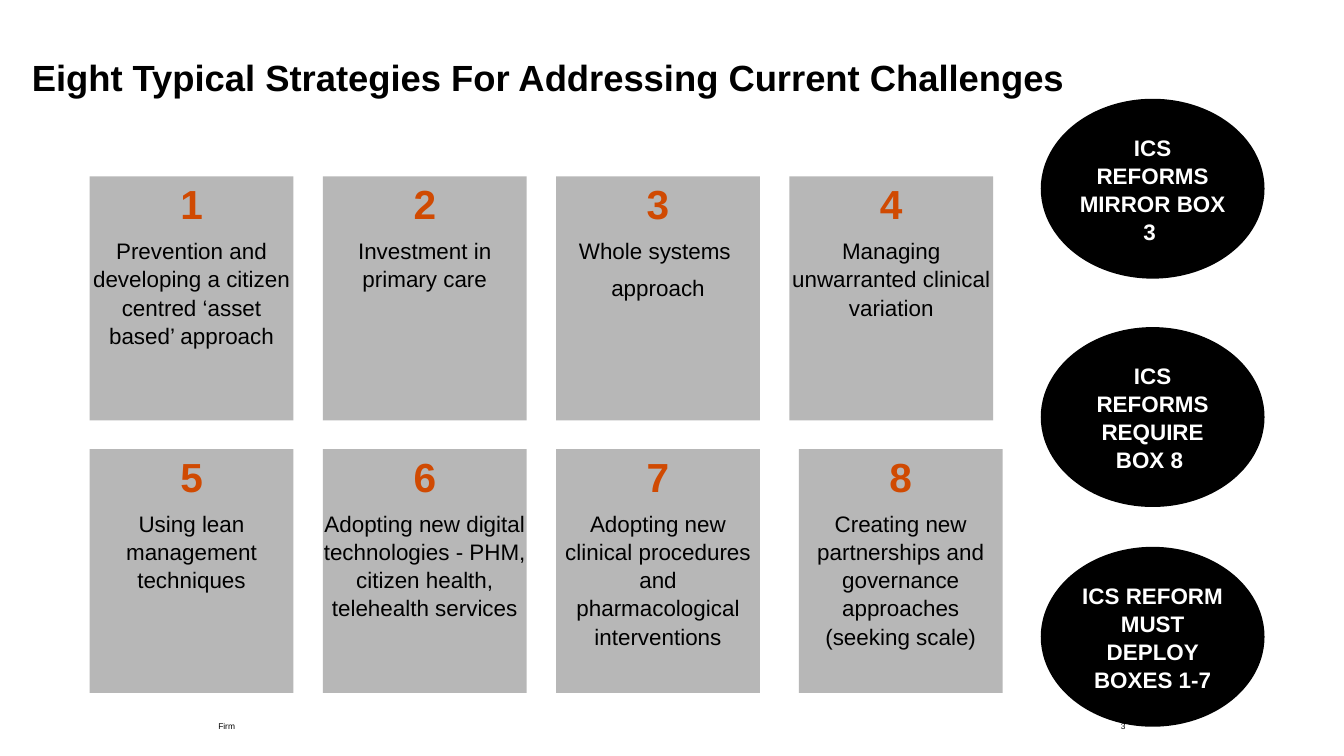
"""Build the slide of eight strategy boxes with three reform callouts."""
import pptx
import pptx.dml.color
import pptx.enum.shapes
import pptx.enum.text
import pptx.oxml
import pptx.util

Pt = pptx.util.Pt
RGBColor = pptx.dml.color.RGBColor
ALIGN = pptx.enum.text.PP_ALIGN
ANCHOR = pptx.enum.text.MSO_ANCHOR
SHAPE = pptx.enum.shapes.MSO_SHAPE

BLACK = RGBColor(0x00, 0x00, 0x00)
WHITE = RGBColor(0xFF, 0xFF, 0xFF)
GREY = RGBColor(0xB7, 0xB7, 0xB7)
ORANGE = RGBColor(0xD0, 0x4A, 0x02)

TITLE = "Eight Typical Strategies For Addressing Current Challenges"
STRATEGIES = [
    ["Prevention and developing a citizen centred ‘asset based’ approach"],
    ["Investment in primary care"],
    ["Whole systems ", "approach"],
    ["Managing unwarranted clinical variation"],
    ["Using lean management techniques"],
    ["Adopting new digital technologies - PHM, citizen health, telehealth services"],
    ["Adopting new clinical procedures and pharmacological interventions"],
    ["Creating new partnerships and governance approaches (seeking scale)"],
]
CALLOUTS = [
    ("ICS REFORMS MIRROR BOX 3 ", 141.1),
    ("ICS REFORMS REQUIRE BOX 8 ", 467.3),
    ("ICS REFORM MUST DEPLOY BOXES 1-7", 781.2),
]
FOOTERS = [
    ("Firm", (311.8, 1030.3, 627.1, 13.7), ALIGN.LEFT, True),
    ("3", (1597.7, 1030.3, 10.1, 13.7), ALIGN.RIGHT, False),
]
PLACEHOLDER_OF_BOX = {1: 1, 6: 2, 7: 3, 8: 4}

COLUMNS = 4
BOX_WIDTH, BOX_HEIGHT = 290.9, 348.5
GRID_LEFT, GRID_TOP = 128.2, 252
COLUMN_PITCH, ROW_PITCH = 333.2, 389.5
BOX_SHIFT = {8: 13.5}
CALLOUT_LEFT, CALLOUT_WIDTH, CALLOUT_HEIGHT = 1486.8, 319.7, 257

NUMBER_FONT = {"name": "Arial", "size": Pt(58), "bold": True}
STRATEGY_FONT = {"name": "Arial", "size": Pt(32), "bold": False}
CALLOUT_FONT = {"name": "Arial", "size": Pt(32), "bold": True}
TITLE_FONT = {"name": "Arial", "size": Pt(52), "bold": True}
FOOTER_FONT = {"name": "Arial", "size": Pt(12), "bold": False}
BOX_LINES = {"alignment": ALIGN.CENTER, "line_spacing": 1.05, "space_after": Pt(0)}


def apply(target, values):
    for name, value in values.items():
        setattr(target, name, value)


def place(shape, left, top, width, height):
    apply(shape, {"left": Pt(left), "top": Pt(top),
                  "width": Pt(width), "height": Pt(height)})


def set_frame(shape, anchor, margin=0, wrap=True):
    margins = {f"margin_{side}": Pt(margin) for side in ("left", "top", "right", "bottom")}
    apply(shape.text_frame, {**margins, "word_wrap": wrap, "vertical_anchor": anchor,
                             "auto_size": pptx.enum.text.MSO_AUTO_SIZE.NONE})


def set_paragraph(paragraph, text, font, color, lines, before=0):
    properties = paragraph._p.get_or_add_pPr()
    properties.set("marL", "0")
    properties.set("indent", "0")
    apply(paragraph, {**lines, "space_before": Pt(before)})
    properties.append(pptx.oxml.parse_xml(
        '<a:buNone xmlns:a="http://schemas.openxmlformats.org/drawingml/2006/main"/>'))
    run = paragraph.add_run()
    run.text = text
    apply(run.font, font)
    run.font.color.rgb = color


def paint(shape, color):
    shape.fill.solid()
    shape.fill.fore_color.rgb = color
    shape.line.fill.background()


def add_shape(slide, kind):
    shape = slide.shapes.add_shape(kind, 0, 0, 0, 0)
    shape.shadow.inherit = False
    return shape


def add_strategy(slide, number, lines):
    row, column = divmod(number - 1, COLUMNS)
    if number in PLACEHOLDER_OF_BOX:
        box = slide.placeholders[PLACEHOLDER_OF_BOX[number]]
    else:
        box = add_shape(slide, SHAPE.RECTANGLE)
    place(box, GRID_LEFT + column * COLUMN_PITCH + BOX_SHIFT.get(number, 0),
          GRID_TOP + row * ROW_PITCH, BOX_WIDTH, BOX_HEIGHT)
    paint(box, GREY)
    set_frame(box, ANCHOR.TOP)
    frame = box.text_frame
    set_paragraph(frame.paragraphs[0], str(number), NUMBER_FONT, ORANGE, BOX_LINES)
    for line in lines:
        set_paragraph(frame.add_paragraph(), line, STRATEGY_FONT, BLACK, BOX_LINES, 12)


def add_callout(slide, text, top):
    ellipse = add_shape(slide, SHAPE.OVAL)
    place(ellipse, CALLOUT_LEFT, top, CALLOUT_WIDTH, CALLOUT_HEIGHT)
    paint(ellipse, BLACK)
    set_frame(ellipse, ANCHOR.MIDDLE, 4.3)
    set_paragraph(ellipse.text_frame.paragraphs[0], text, CALLOUT_FONT, WHITE, BOX_LINES)


def main():
    presentation = pptx.Presentation()
    presentation.slide_width, presentation.slide_height = Pt(1920), Pt(1080)
    slide = presentation.slides.add_slide(
        presentation.slide_layouts.get_by_name("Comparison"))

    title = slide.shapes.title
    place(title, 45.4, 88.6, 1495.4, 170.6)
    set_frame(title, ANCHOR.TOP)
    set_paragraph(title.text_frame.paragraphs[0], TITLE, TITLE_FONT, BLACK,
                  {"alignment": ALIGN.LEFT, "line_spacing": 0.85})

    for number, lines in enumerate(STRATEGIES, 1):
        add_strategy(slide, number, lines)

    for text, position, alignment, wrap in FOOTERS:
        footer = slide.shapes.add_textbox(0, 0, 0, 0)
        place(footer, *position)
        set_frame(footer, ANCHOR.BOTTOM, wrap=wrap)
        set_paragraph(footer.text_frame.paragraphs[0], text, FOOTER_FONT, BLACK,
                      {"alignment": alignment})

    for text, top in CALLOUTS:
        add_callout(slide, text, top)

    presentation.save("out.pptx")


if __name__ == "__main__":
    main()
